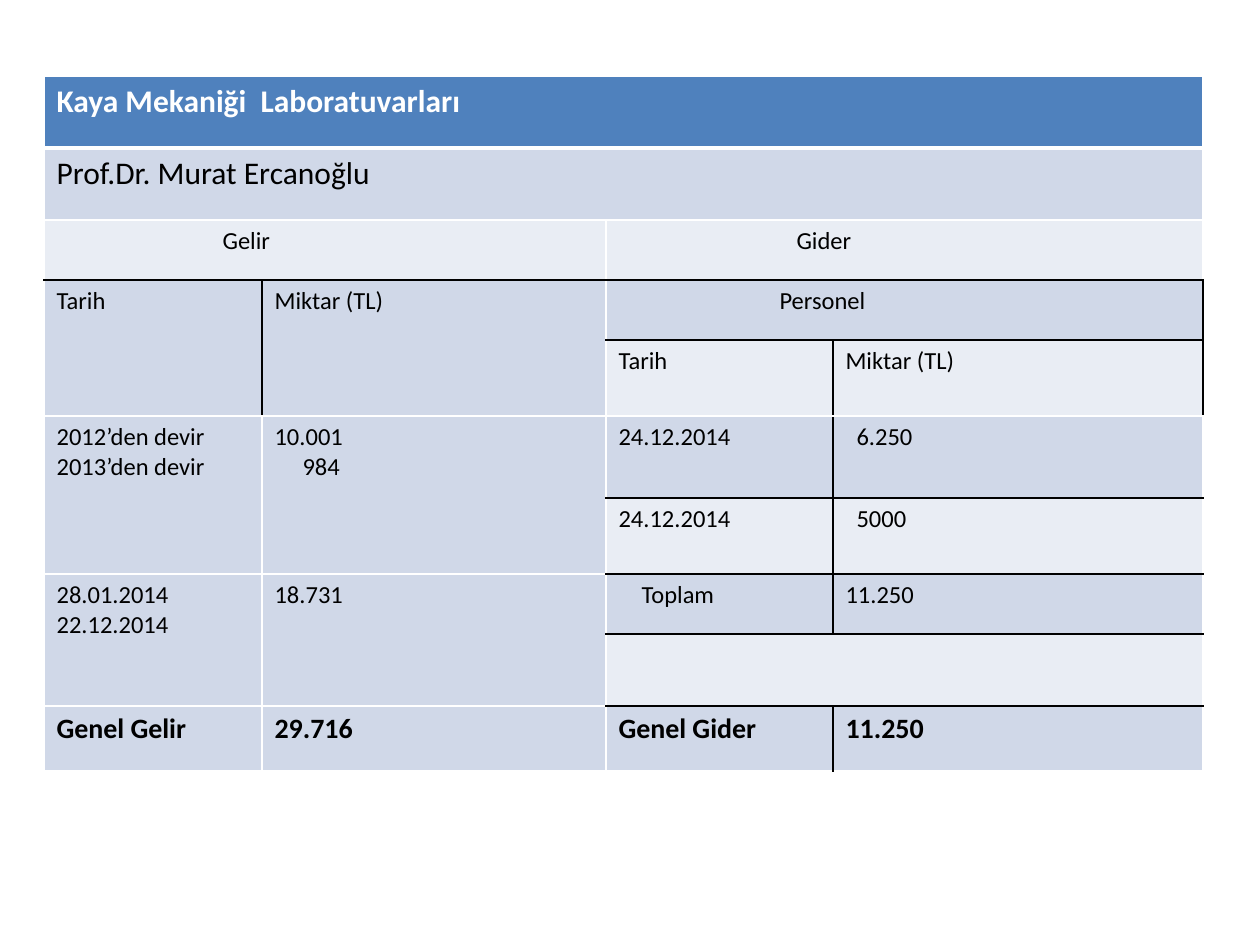
"""Build the income and expense table of a rock mechanics laboratory."""
from dataclasses import dataclass

from lxml.etree import SubElement
from pptx import Presentation
from pptx.dml.color import RGBColor
from pptx.oxml.ns import qn
from pptx.util import Emu, Pt


@dataclass(frozen=True)
class Theme:
    """Colours, type sizes and line widths of the slide."""
    font: str = "Calibri"
    header: str = "4F81BD"
    band: str = "D0D8E8"
    light: str = "E9EDF4"
    white: str = "FFFFFF"
    black: str = "000000"
    heading: int = 18
    body: int = 14
    total: int = 16
    hairline: int = 1
    header_rule: int = 3


class SlideBuilder:
    """Hold the theme and the current slide."""

    def __init__(self, presentation, theme):
        """Start a blank slide."""
        self.theme = theme
        self.slide = presentation.slides.add_slide(presentation.slide_layouts[6])

    def px(self, length):
        """Turn pixels into EMU."""
        return Emu(round(length * 914400 / 126))

    def table(self, left, top, widths, heights):
        """Add a table with the given column widths and row heights."""
        frame = self.slide.shapes.add_table(
            len(heights), len(widths), self.px(left), self.px(top),
            self.px(sum(widths)), self.px(sum(heights)))
        grid = frame.table
        for column, width in zip(grid.columns, widths):
            column.width = self.px(width)
        for row, height in zip(grid.rows, heights):
            row.height = self.px(height)
        return grid

    def border(self, cell, side, colour, width):
        """Draw one side of a cell."""
        line = SubElement(cell._tc.get_or_add_tcPr(), qn(f"a:ln{side}"), w=str(Pt(width)))
        SubElement(SubElement(line, qn("a:solidFill")), qn("a:srgbClr"), val=colour)

    def cell(self, grid, row, column, lines, span=(1, 1), dark="", fill=None,
             size=None, colour=None, bold=False, rule=None, indents=()):
        """Fill one cell, with black lines on the sides listed in dark."""
        theme = self.theme
        cell = grid.cell(row, column)
        if span != (1, 1):
            cell.merge(grid.cell(row + span[0] - 1, column + span[1] - 1))
        for side in "LRTB":
            width = rule if rule and side == "B" else theme.hairline
            self.border(cell, side, theme.black if side in dark else theme.white, width)
        cell.fill.solid()
        cell.fill.fore_color.rgb = RGBColor.from_string(fill or theme.band)
        cell.text = "\n".join(lines)
        style = {"name": theme.font, "size": Pt(size or theme.body), "bold": bold}
        for paragraph in cell.text_frame.paragraphs:
            for font in [paragraph.font, *(run.font for run in paragraph.runs)]:
                for attribute, value in style.items():
                    setattr(font, attribute, value)
                font.color.rgb = RGBColor.from_string(colour or theme.black)
        for paragraph, indent in zip(cell.text_frame.paragraphs, indents):
            properties = paragraph._p.get_or_add_pPr()
            properties.set("marL", str(self.px(indent)))
            properties.set("indent", "0")


def main():
    """Build and save the presentation."""
    theme = Theme()
    presentation = Presentation()
    builder = SlideBuilder(presentation, theme)
    presentation.slide_width, presentation.slide_height = builder.px(1260), builder.px(945)
    ledger = builder.table(44, 76, [218, 344, 227, 370],
                           [72, 72, 60, 60, 76, 82, 76, 60, 72, 65])

    wide, pair, tall = (1, 4), (1, 2), (2, 1)
    heading = {"span": wide, "size": theme.heading}
    light = {"fill": theme.light}
    total = {"size": theme.total, "bold": True}
    entries = [
        (0, 0, ["Kaya Mekaniği  Laboratuvarları"],
         {**heading, "fill": theme.header, "colour": theme.white, "bold": True,
          "rule": theme.header_rule}),
        (1, 0, ["Prof.Dr. Murat Ercanoğlu"], heading),
        (2, 0, ["Gelir"], {**light, "span": pair, "dark": "B", "indents": [166]}),
        (2, 2, ["Gider"], {**light, "span": pair, "dark": "B", "indents": [178]}),
        (3, 0, ["Tarih"], {"span": tall, "dark": "TR"}),
        (3, 1, ["Miktar (TL)"], {"span": tall, "dark": "LT"}),
        (3, 2, ["Personel"], {"span": pair, "dark": "TRB", "indents": [161]}),
        (4, 2, ["Tarih"], {**light, "dark": "TR"}),
        (4, 3, ["Miktar (TL)"], {**light, "dark": "LTR"}),
        (5, 0, ["2012’den devir", "2013’den devir"], {"span": tall}),
        (5, 1, ["10.001", "984"], {"span": tall, "indents": [0, 28]}),
        (5, 2, ["24.12.2014"], {"dark": "RB"}),
        (5, 3, ["6.250"], {"dark": "LB", "indents": [11]}),
        (6, 2, ["24.12.2014"], {**light, "dark": "TRB"}),
        (6, 3, ["5000"], {**light, "dark": "LTB", "indents": [11]}),
        (7, 0, ["28.01.2014", "22.12.2014"], {"span": tall}),
        (7, 1, ["18.731"], {"span": tall}),
        (7, 2, ["Toplam"], {"dark": "TRB", "indents": [23]}),
        (7, 3, ["11.250"], {"dark": "LTB"}),
        (8, 2, [], {**light, "span": pair, "dark": "TB"}),
        (9, 0, ["Genel Gelir"], total),
        (9, 1, ["29.716"], total),
        (9, 2, ["Genel Gider"], {**total, "dark": "TR"}),
        (9, 3, ["11.250"], {**total, "dark": "LT"}),
    ]
    for row, column, lines, formats in entries:
        builder.cell(ledger, row, column, lines, **formats)
    presentation.save("out.pptx")


if __name__ == "__main__":
    main()
